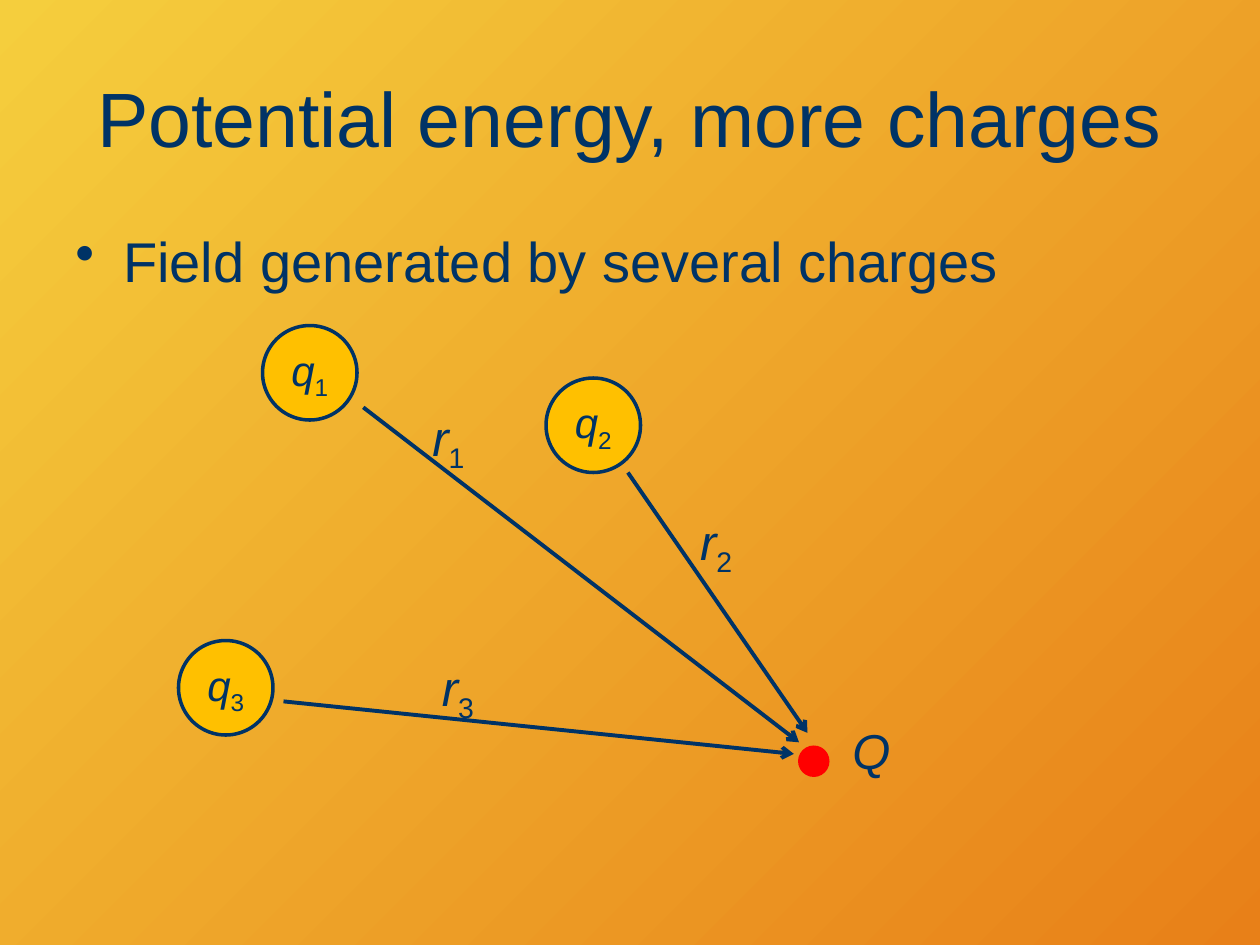
from dataclasses import dataclass

from lxml.etree import SubElement
from pptx import Presentation
from pptx.dml.color import RGBColor as Rgb
from pptx.enum.shapes import MSO_CONNECTOR as Connector, MSO_SHAPE as Shape
from pptx.enum.text import MSO_ANCHOR as Anchor, PP_ALIGN as Align
from pptx.oxml.ns import qn
from pptx.util import Inches, Pt


@dataclass(frozen=True)
class Theme:
    font: str = "Arial"
    ink: str = "003366"
    charge: str = "FFC000"
    target: str = "FF0000"
    background: tuple = ("F5CE3D", "E88018")
    title: int = 44
    body: int = 32
    label: int = 28
    symbol: int = 24
    outline: float = 2
    arrow: float = 2.25


THEME = Theme()
COLUMNS, ROWS = 120, 90
CELL = Inches(10) // COLUMNS
CHARGE_SIZE, TARGET_SIZE = 9, 3

# subscript, charge corner, distance label corner, arrow start, arrow end
CHARGES = [
    ("1", (25, 31), (40, 38.2), (34.6, 38.8), (76.1, 70.7)),
    ("2", (52, 36), (65.5, 48.1), (59.8, 45), (76.9, 69.8)),
    ("3", (17, 61), (40.9, 62), (27, 66.8), (75.6, 71.8)),
]


def cells(*counts):
    return [round(count * CELL) for count in counts]


def apply(target, values):
    for name, value in values.items():
        setattr(target, name, value)


def paint_background(page):
    fill = page.background.fill
    fill.gradient()
    fill.gradient_angle = 315
    for stop, color, position in zip(fill.gradient_stops, THEME.background, (0, 1)):
        stop.color.rgb = Rgb.from_string(color)
        stop.position = position


def add_span(para, text, size, italic=False, subscript=False):
    span = para.add_run()
    span.text = text
    apply(span.font, {"name": THEME.font, "size": Pt(size), "italic": italic})
    span.font.color.rgb = Rgb.from_string(THEME.ink)
    if subscript:
        span.font._element.set("baseline", "-25000")


def add_symbol(para, letter, subscript, size):
    """Write an italic letter with an optional upright subscript."""
    add_span(para, letter, size, italic=True)
    if subscript:
        add_span(para, subscript, size, subscript=True)


def add_text_box(page, *place, anchor=Anchor.TOP):
    frame = page.shapes.add_textbox(*cells(*place)).text_frame
    apply(frame, {"word_wrap": True, "vertical_anchor": anchor})
    return frame.paragraphs[0]


def add_title(page, text):
    para = add_text_box(page, 6, 3.6, 108, 15, anchor=Anchor.MIDDLE)
    para.alignment = Align.CENTER
    add_span(para, text, THEME.title)


def add_bullet(page, text):
    para = add_text_box(page, 6, 21, 107, 9)
    para.space_before = Pt(0.2 * THEME.body)
    add_span(para, text, THEME.body)
    settings = para._p.get_or_add_pPr()
    indent = Inches(0.38)
    settings.set("marL", str(indent))
    settings.set("indent", str(-indent))
    SubElement(settings, qn("a:buChar"), char="•")


def add_label(page, corner, letter, subscript=""):
    para = add_text_box(page, *corner, 6, 6.8)
    add_symbol(para, letter, subscript, THEME.label)


def add_circle(page, corner, size, color):
    circle = page.shapes.add_shape(Shape.OVAL, *cells(*corner, size, size))
    circle.shadow.inherit = False
    circle.fill.solid()
    circle.fill.fore_color.rgb = Rgb.from_string(color)
    circle.line.fill.background()
    return circle


def add_charge(page, corner, subscript):
    circle = add_circle(page, corner, CHARGE_SIZE, THEME.charge)
    circle.line.color.rgb = Rgb.from_string(THEME.ink)
    circle.line.width = Pt(THEME.outline)
    frame = circle.text_frame
    apply(frame, {"vertical_anchor": Anchor.MIDDLE, "margin_left": 0, "margin_right": 0})
    para = frame.paragraphs[0]
    para.alignment = Align.CENTER
    add_symbol(para, "q", subscript, THEME.symbol)


def add_arrow(page, start, end):
    arrow = page.shapes.add_connector(Connector.STRAIGHT, *cells(*start, *end))
    arrow.line.color.rgb = Rgb.from_string(THEME.ink)
    arrow.line.width = Pt(THEME.arrow)
    SubElement(arrow.line._get_or_add_ln(), qn("a:tailEnd"), type="arrow")
    SubElement(arrow._element.spPr, qn("a:effectLst"))


def main():
    deck = Presentation()
    apply(deck, {"slide_width": COLUMNS * CELL, "slide_height": ROWS * CELL})
    page = deck.slides.add_slide(deck.slide_layouts[6])
    paint_background(page)
    add_title(page, "Potential energy, more charges")
    add_bullet(page, "Field generated by several charges")
    for subscript, charge, label, start, end in CHARGES:
        add_charge(page, charge, subscript)
        add_arrow(page, start, end)
        add_label(page, label, "r", subscript)
    add_circle(page, (76, 71), TARGET_SIZE, THEME.target)
    add_label(page, (80, 68), "Q")
    deck.save("out.pptx")


if __name__ == "__main__":
    main()
